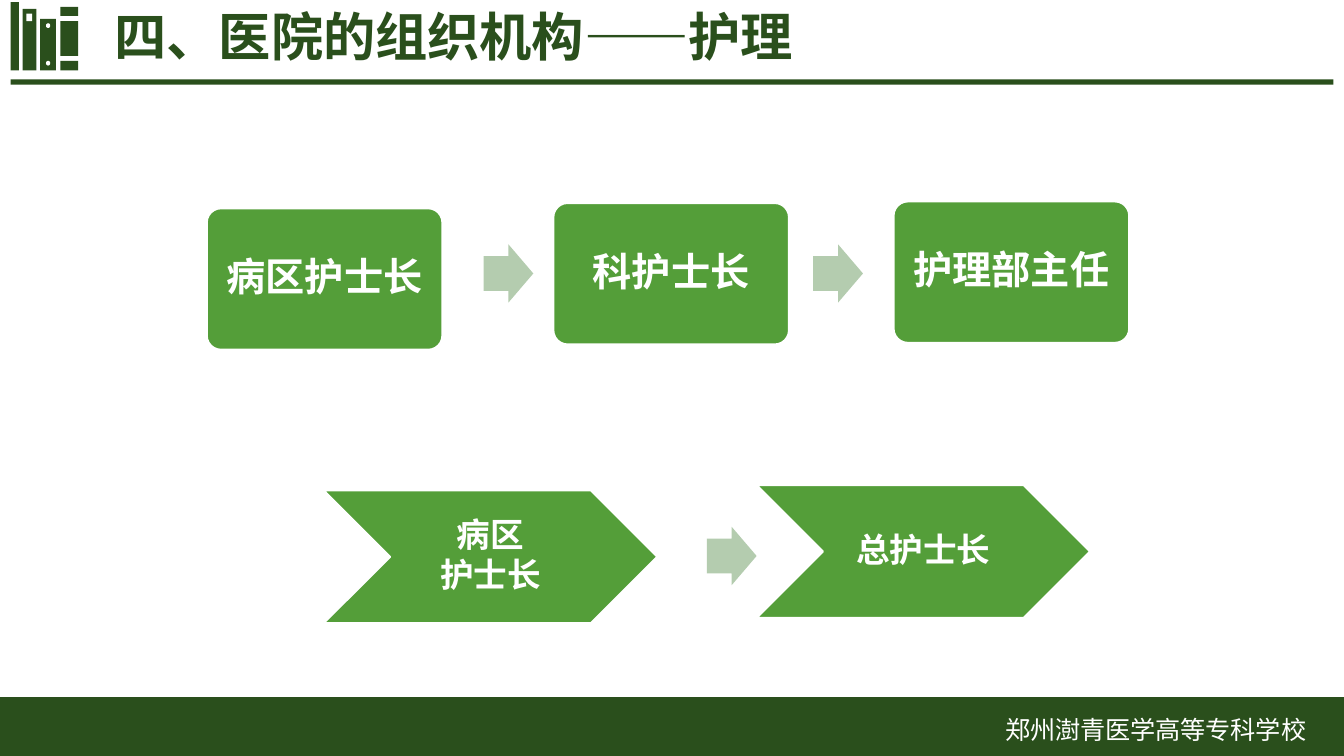
"""Build the slide on a hospital's nursing organisation."""
from pptx import Presentation, util as u
from pptx.dml.color import RGBColor
from pptx.enum import lang, shapes, text

DARK = RGBColor(0x2A, 0x4F, 0x1C)
GREEN = RGBColor(0x54, 0x9E, 0x39)
PALE = RGBColor(0xB4, 0xCC, 0xAF)
WHITE = RGBColor(0xFF, 0xFF, 0xFF)
KIND = shapes.MSO_SHAPE

TITLE = "四、医院的组织机构——护理"
SCHOOL = "郑州澍青医学高等专科学校"
RULE = (0.2, 1.5, 25, 0.1)
FOOTER = (0, 13.18, 25.4, 1.11)
BOOKS = [
    (0.2, 0.04, 0.16, 1.29),
    (0.43, 0.17, 0.26, 1.16),
    (0.76, 0.36, 0.3, 0.97),
    (1.14, 0.13, 0.34, 0.17),
    (1.14, 0.4, 0.34, 0.66),
    (1.14, 1.15, 0.34, 0.18),
]
BOOK_LABEL = (0.5, 0.26, 0.11, 0.14)
BOOK_DOTS = [(0.87, 0.44, 0.08, 0.09), (0.87, 1.15, 0.08, 0.09)]

BOX_SIZE = (4.45, 2.67)
BOXES = [
    ("病区护士长", 3.91, 3.94),
    ("科护士长", 10.46, 3.84),
    ("护理部主任", 16.89, 3.81),
]
CHEVRON_SIZE = (6.3, 2.51)
CHEVRONS = [("病区\n护士长", 6.12, 9.27), ("总护士长", 14.3, 9.17)]
ARROW_SIZE = (0.94, 1.1)
ARROWS = [(9.14, 4.62), (15.37, 4.62), (13.36, 9.96)]


def add_shape(s, kind, place, fill, adjust=(), outline=None):
    sp = s.shapes.add_shape(kind, *map(u.Cm, place))
    sp.shadow.inherit = False
    sp.fill.solid()
    sp.fill.fore_color.rgb = fill
    if outline is None:
        sp.line.fill.background()
    else:
        sp.line.color.rgb = outline
        sp.line.width = u.Pt(1)
    for i, value in enumerate(adjust):
        sp.adjustments[i] = value
    return sp


def set_text(sp, words, font, size, color, bold=True, align=text.PP_ALIGN.LEFT,
             spacing=0.9, after=0):
    tf = sp.text_frame
    tf.text = words
    tf.word_wrap = True
    tf.auto_size = text.MSO_AUTO_SIZE.NONE
    tf.vertical_anchor = text.MSO_ANCHOR.MIDDLE
    for p in tf.paragraphs:
        p.alignment = align
        p.line_spacing = spacing
        p.space_before = u.Pt(0)
        p.space_after = u.Pt(after)
        for r in p.runs:
            r.font.name = font
            r.font.size = u.Pt(size)
            r.font.bold = bold
            r.font.color.rgb = color
            r.font.language_id = lang.MSO_LANGUAGE_ID.SIMPLIFIED_CHINESE
    return tf


def add_step(s, kind, step, size, adjust, font_size, margins):
    words, left, top = step
    sp = add_shape(s, kind, (left, top, *size), GREEN, adjust, WHITE)
    tf = set_text(sp, words, "Arial", font_size, WHITE,
                  align=text.PP_ALIGN.CENTER, after=2)
    tf.margin_left = tf.margin_right = u.Cm(margins[0])
    tf.margin_top = tf.margin_bottom = u.Cm(margins[1])


def main():
    prs = Presentation()
    prs.slide_width, prs.slide_height = u.Cm(25.4), u.Cm(14.29)
    s = prs.slides.add_slide(prs.slide_layouts[5])

    for place in (RULE, *BOOKS, FOOTER):
        add_shape(s, KIND.RECTANGLE, place, DARK)
    add_shape(s, KIND.RECTANGLE, BOOK_LABEL, WHITE)
    for place in BOOK_DOTS:
        add_shape(s, KIND.OVAL, place, WHITE)

    school = s.shapes.add_textbox(*map(u.Cm, (18.75, 13.36, 6.65, 0.84)))
    set_text(school, SCHOOL, "Noto Sans CJK SC", 13.5, WHITE, bold=False, spacing=1)

    title = s.shapes.title
    title.left, title.top, title.width, title.height = map(u.Cm, (1.91, 0.3, 16.38, 0.91))
    set_text(title, TITLE, "Montserrat", 28, DARK)

    for step in BOXES:
        add_step(s, KIND.ROUNDED_RECTANGLE, step, BOX_SIZE, [0.1], 21, (0.22, 0.22))
    for step in CHEVRONS:
        add_step(s, KIND.CHEVRON, step, CHEVRON_SIZE, [0.5], 18, (0.1, 0.08))
    for place in ARROWS:
        add_shape(s, KIND.RIGHT_ARROW, (*place, *ARROW_SIZE), PALE, [0.6, 0.5])

    prs.save("out.pptx")


if __name__ == "__main__":
    main()
